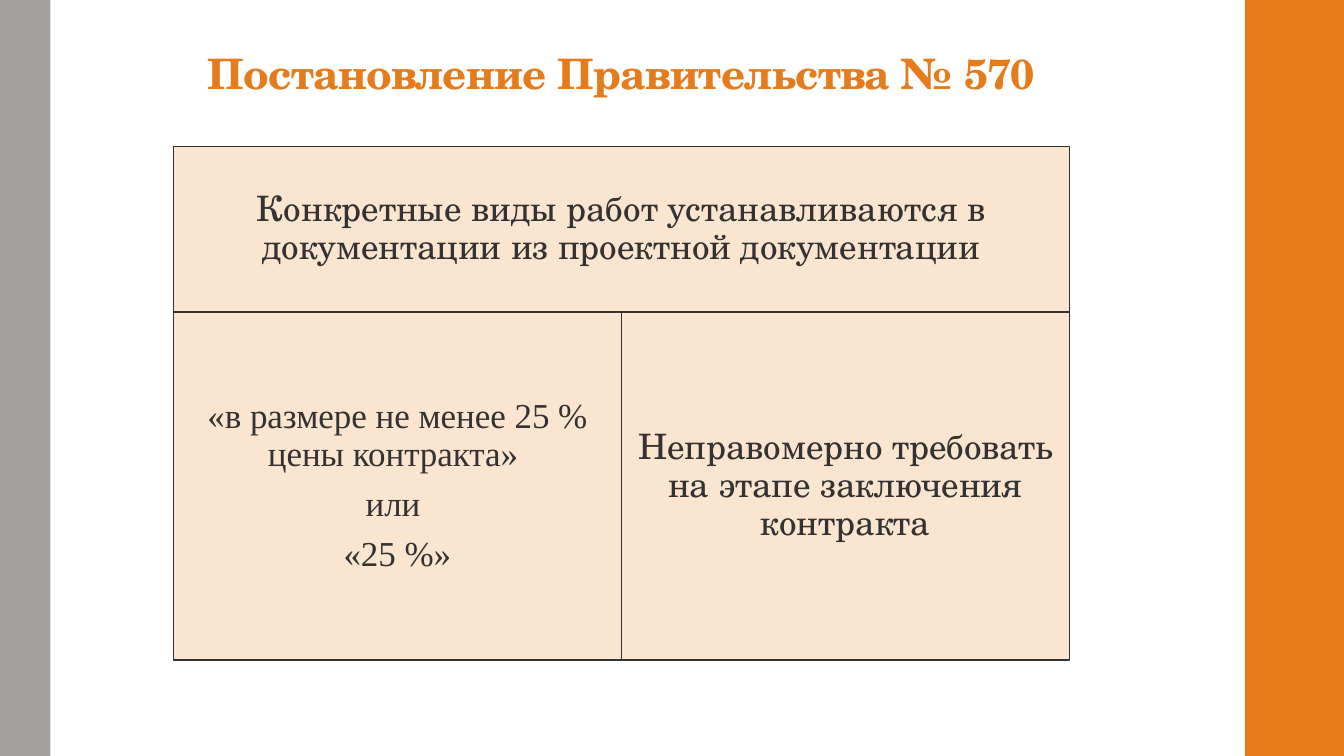
"""Builds a slide on Government Decree No. 570."""
from pptx import Presentation
from pptx import util as u
from pptx.dml.color import RGBColor
from pptx.enum import shapes, text

WIDTH, HEIGHT = 960, 540
SERIF, TIMES = "TeX Gyre Schola", "Times New Roman"
ORANGE, GREY, PEACH, DARK = "E57B1B", "A6A1A1", "FAE5D1", "343232"

TITLE = "Постановление Правительства № 570"
HEADING = ["Конкретные виды работ устанавливаются в документации из проектной документации"]
COLUMNS = [
    (["«в размере не менее 25 % цены контракта» ", "или ", "«25 %»"], TIMES),
    (["Неправомерно требовать на этапе заключения контракта"], SERIF),
]
SIDE_BARS = [(889.2, 72, ORANGE), (0, 36, GREY)]

GRID_LEFT, GRID_TOP, GRID_WIDTH = 123.84, 104.6, 640
HEADING_HEIGHT, COLUMN_HEIGHT = 118.4, 248.4


def colour(value):
    return RGBColor.from_string(value)


def write(box, lines, font=SERIF, size=25, ink=DARK, bold=False, spacing=0,
          align=text.PP_ALIGN.CENTER, anchor=text.MSO_ANCHOR.MIDDLE,
          after=8.75, insets=(7.2, 7.2, 7.2, 7.2)):
    frame = box.text_frame
    frame.word_wrap = True
    frame.vertical_anchor = anchor
    (frame.margin_left, frame.margin_top,
     frame.margin_right, frame.margin_bottom) = map(u.Pt, insets)
    for index, line in enumerate(lines):
        para = frame.add_paragraph() if index else frame.paragraphs[0]
        para.alignment = align
        para.line_spacing = 0.9
        para.space_after = u.Pt(after)
        span = para.add_run()
        span.text = line
        span.font.name = font
        span.font.size = u.Pt(size)
        span.font.bold = bold
        span.font.color.rgb = colour(ink)
        if spacing:
            span.font._element.set("spc", str(int(spacing * 100)))


def add_box(page, left, top, width, height, fill, line_width=0):
    box = page.shapes.add_shape(shapes.MSO_SHAPE.RECTANGLE,
                                *map(u.Pt, (left, top, width, height)))
    box.shadow.inherit = False
    box.fill.solid()
    box.fill.fore_color.rgb = colour(fill)
    if line_width:
        box.line.color.rgb = colour(DARK)
        box.line.width = u.Pt(line_width)
    else:
        box.line.fill.background()
    return box


def main():
    deck = Presentation()
    deck.slide_width, deck.slide_height = u.Pt(WIDTH), u.Pt(HEIGHT)
    page = deck.slides.add_slide(deck.slide_layouts[6])

    for left, width, fill in SIDE_BARS:
        add_box(page, left, 0, width, HEIGHT, fill)

    title = page.shapes.add_textbox(*map(u.Pt, (141.12, 21.6, 655.2, 52.56)))
    write(title, [TITLE], size=30, ink=ORANGE, bold=True, spacing=-0.5,
          align=text.PP_ALIGN.LEFT, anchor=text.MSO_ANCHOR.BOTTOM,
          after=0, insets=(7.2, 2.16, 7.2, 3.6))

    heading = add_box(page, GRID_LEFT, GRID_TOP, GRID_WIDTH, HEADING_HEIGHT, PEACH, 0.75)
    write(heading, HEADING)

    column_width = GRID_WIDTH / len(COLUMNS)
    for index, (lines, font) in enumerate(COLUMNS):
        column = add_box(page, GRID_LEFT + index * column_width, GRID_TOP + HEADING_HEIGHT,
                         column_width, COLUMN_HEIGHT, PEACH, 1.1)
        write(column, lines, font=font)

    deck.save("out.pptx")


if __name__ == "__main__":
    main()
